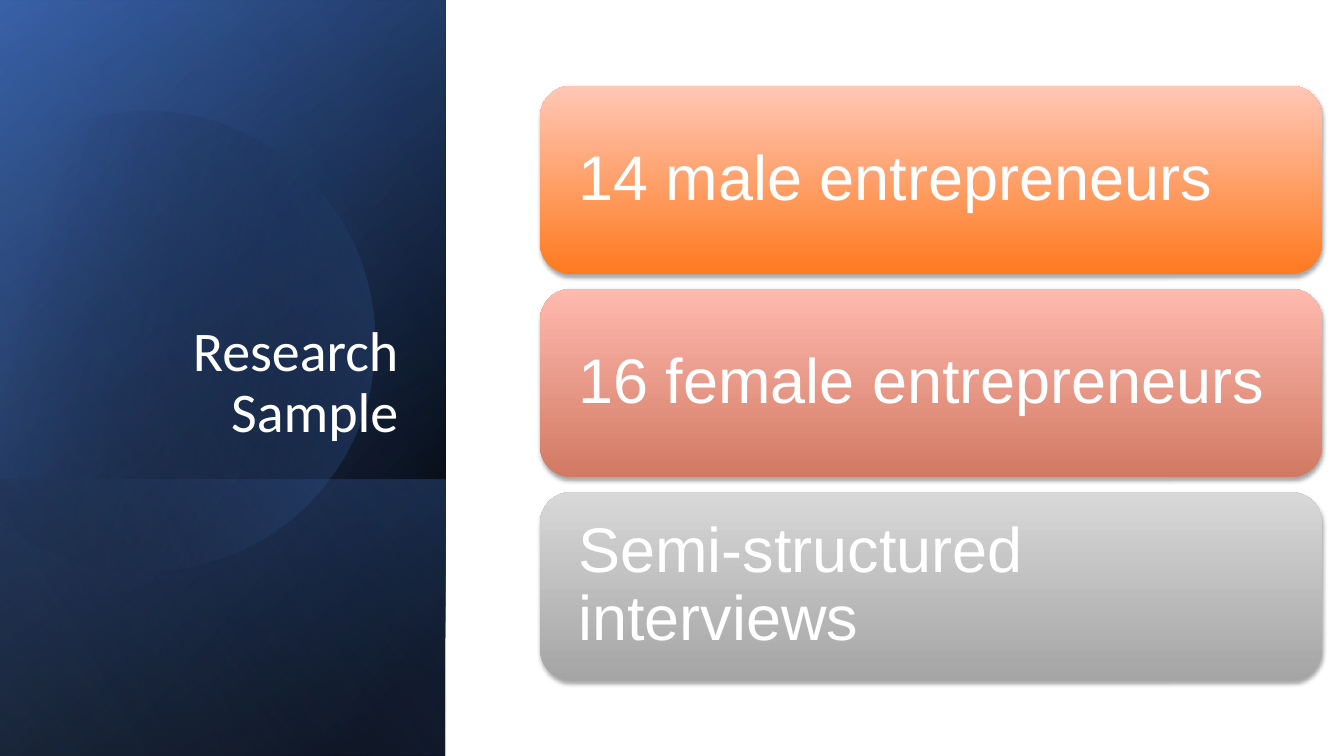
import math
from dataclasses import dataclass

import pptx
import pptx.dml.color
import pptx.enum.shapes
import pptx.enum.text
import pptx.oxml
import pptx.oxml.ns
import pptx.util

Cm = pptx.util.Cm
Pt = pptx.util.Pt
qn = pptx.oxml.ns.qn
SHAPES = pptx.enum.shapes.MSO_SHAPE
ANCHOR = pptx.enum.text.MSO_ANCHOR
ALIGN = pptx.enum.text.PP_ALIGN


@dataclass(frozen=True)
class Theme:
    text: str = "FFFFFF"
    black: str = "000000"
    navy: str = "2F5597"
    blue: str = "4472C4"
    sky: str = "8FAADC"
    orange: tuple = ("FF7A1F", "FFC7B6")
    coral: tuple = ("D17963", "FFBAAE")
    grey: tuple = ("A5A5A5", "D8D8D8")
    title_size: int = 40
    card_size: int = 45


theme = Theme()


def paint(shape, stops, angle):
    """Fill with two (position %, colour, opacity %) stops, angle clockwise."""
    shape.shadow.inherit = False
    shape.line.fill.background()
    shape.fill.gradient()
    shape.fill.gradient_angle = (360 - angle) % 360
    for stop, (position, colour, _) in zip(shape.fill.gradient_stops, stops):
        stop.position = position / 100
        stop.color.rgb = pptx.dml.color.RGBColor.from_string(colour)
    colours = shape._element.spPr.iter(qn("a:srgbClr"))
    for element, (_, _, opacity) in zip(colours, stops):
        if opacity < 100:
            alpha = element.makeelement(qn("a:alpha"), {"val": str(opacity * 1000)})
            element.append(alpha)


def write(shape, text, size, font, align, frame_format):
    frame = shape.text_frame
    for name, value in frame_format.items():
        setattr(frame, name, value)
    paragraph = frame.paragraphs[0]
    paragraph.alignment = align
    paragraph.line_spacing = 0.9
    run = paragraph.add_run()
    run.text = text
    for name, value in {"size": Pt(size), "name": font}.items():
        setattr(run.font, name, value)
    run.font.color.rgb = pptx.dml.color.RGBColor.from_string(theme.text)


deck = pptx.Presentation()
deck.slide_width, deck.slide_height = Cm(33.87), Cm(19.05)
slide = deck.slides.add_slide(deck.slide_layouts[6])
shapes = slide.shapes

# Left panel: turned rectangles (length, centre y, stops, angle) around the circle
panel_width, panel_middle = 11.23, 5.61
layers = [
    (19.05, 9.53, [(8, theme.black, 100), (100, theme.navy, 100)], 50),
    (19.05, 9.55, [(0, theme.black, 0), (99, theme.blue, 46)], 30),
    (6.96, 15.57, [(2, theme.blue, 29), (100, theme.black, 30)], 130),
    "circle",
    (19.05, 9.53, [(0, theme.black, 0), (99, theme.sky, 11)], 120),
]

# Outline of the circle, cut off at the slide edge: curves (6 numbers) and lines (2)
circle_tilt, circle_centre = 343.9, (4.03, 8.5)
circle_start = (3.78, 2.79)
circle_outline = [
    (6.25, 2.84, 8.51, 4.5, 9.22, 6.99),
    (10.11, 10.08, 8.33, 13.29, 5.26, 14.17),
    (3.33, 14.73, 1.35, 14.25, -0.08, 13.06),
    (-0.38, 12.78),
    (-0.38, 4.45),
    (0, 4.09),
    (0.58, 3.61, 1.27, 3.23, 2.03, 3.02),
    (2.62, 2.87, 3.2, 2.79, 3.78, 2.79),
]
curve_steps = 16
circle_points = [circle_start]
for segment in circle_outline:
    if len(segment) == 2:
        circle_points.append(segment)
        continue
    controls = [circle_points[-1], segment[:2], segment[2:4], segment[4:]]
    for step in range(1, curve_steps + 1):
        t = step / curve_steps
        weights = [math.comb(3, i) * t**i * (1 - t) ** (3 - i) for i in range(4)]
        circle_points.append(
            tuple(sum(w * c[axis] for w, c in zip(weights, controls)) for axis in (0, 1))
        )

# Turn the outline back, since the shape itself carries the tilt
turn = math.radians(-circle_tilt)
upright_points = []
for x, y in circle_points:
    dx, dy = x - circle_centre[0], y - circle_centre[1]
    upright_points.append((
        Cm(circle_centre[0] + dx * math.cos(turn) - dy * math.sin(turn)),
        Cm(circle_centre[1] + dx * math.sin(turn) + dy * math.cos(turn)),
    ))

for layer in layers:
    if layer == "circle":
        builder = shapes.build_freeform(*upright_points[0], scale=1.0)
        builder.add_line_segments(upright_points[1:], close=True)
        circle = builder.convert_to_shape()
        circle.rotation = circle_tilt
        paint(circle, [(29, theme.black, 0), (100, theme.blue, 43)], 30)
        continue
    length, middle, stops, angle = layer
    panel = shapes.add_shape(
        SHAPES.RECTANGLE,
        Cm(panel_middle - length / 2), Cm(middle - panel_width / 2),
        Cm(length), Cm(panel_width),
    )
    panel.rotation = 90
    panel._element.spPr.find(qn("a:xfrm")).set("flipH", "1")
    paint(panel, stops, angle)

# Title
title = shapes.add_textbox(Cm(1.63), Cm(4.67), Cm(8.66), Cm(6.65))
write(title, "Research Sample", theme.title_size, "Calibri", ALIGN.RIGHT,
      {"word_wrap": True, "vertical_anchor": ANCHOR.BOTTOM})

# Cards, evenly stacked
card_top, card_step = 2.16, 5.12
card_format = {
    "word_wrap": True,
    "vertical_anchor": ANCHOR.MIDDLE,
    "margin_left": Cm(0.73),
    "margin_right": Cm(0.73),
}
cards = [
    ("14 male entrepreneurs", theme.orange),
    ("16 female entrepreneurs", theme.coral),
    ("Semi-structured interviews", theme.grey),
]
card_shadow = (
    '<a:outerShdw xmlns:a="http://schemas.openxmlformats.org/drawingml/2006/main" '
    'blurRad="40000" dist="23000" dir="5400000" rotWithShape="0">'
    f'<a:srgbClr val="{theme.black}"><a:alpha val="35000"/></a:srgbClr></a:outerShdw>'
)
for row, (text, (dark, light)) in enumerate(cards):
    card = shapes.add_shape(SHAPES.ROUNDED_RECTANGLE, Cm(13.61),
                            Cm(card_top + row * card_step), Cm(19.71), Cm(4.75))
    paint(card, [(0, dark, 100), (100, light, 100)], 270)
    effects = card._element.spPr.find(qn("a:effectLst"))
    effects.append(pptx.oxml.parse_xml(card_shadow))
    write(card, text, theme.card_size, "Arial", ALIGN.LEFT, card_format)

deck.save("out.pptx")
